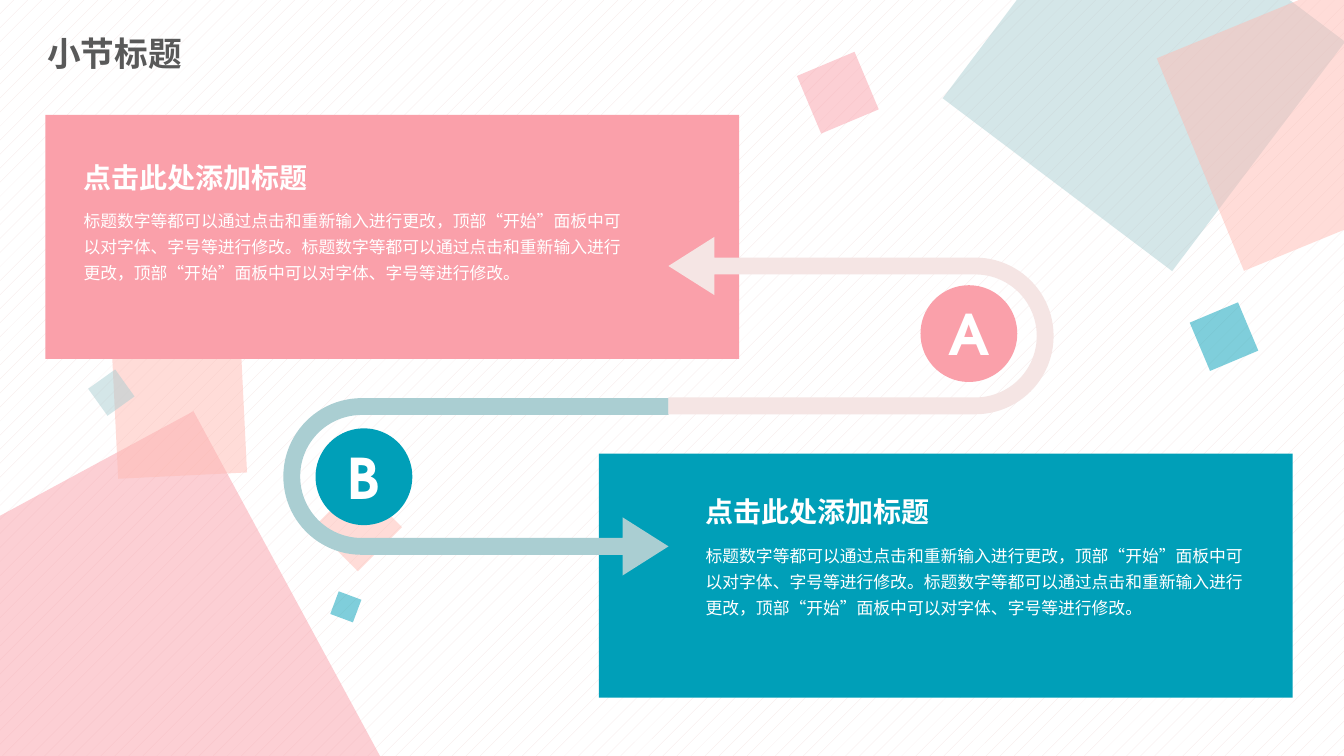
from lxml import etree
from pptx import Presentation
from pptx.dml.color import RGBColor
from pptx.enum.dml import MSO_PATTERN
from pptx.enum.shapes import MSO_SHAPE
from pptx.enum.text import MSO_ANCHOR, MSO_AUTO_SIZE, PP_ALIGN
from pptx.oxml.ns import qn
from pptx.util import Inches, Pt

COLORS = {
    "pink": "FAA0AA",
    "peach": "FFBBB3",
    "blush": "F5E5E4",
    "mist": "AACED2",
    "teal": "009FB8",
    "gray": "595959",
    "white": "FFFFFF",
}
CJK_FONT = "Noto Sans CJK SC"
LATIN_FONT = "TeX Gyre Adventor"

# left, top, side, rotation, colour
SQUARES = [
    (-0.93, 4.8, 4.06, 331.6, "pink"),
    (1.14, 3.44, 1.28, 357.2, "peach"),
    (3.24, 4.92, 0.62, 315, "peach"),
    (0.94, 3.73, 0.33, 324.4, "mist"),
    (9.92, -0.73, 2.85, 37, "mist"),
    (11.82, 0.06, 2.28, 337.7, "peach"),
    (8, 0.61, 0.62, 337.2, "pink"),
    (11.88, 3.08, 0.52, 337.2, "teal"),
    (3.31, 5.9, 0.24, 290.5, "teal"),
]
HEADING = "点击此处添加标题"
SENTENCE = "标题数字等都可以通过点击和重新输入进行更改，顶部“开始”面板中可以对字体、字号等进行修改。"


def rgb(name):
    return RGBColor.from_string(COLORS[name])


def write(frame, text, size, color="white", font=LATIN_FONT, bold=False,
          align=PP_ALIGN.LEFT, anchor=MSO_ANCHOR.TOP, line_spacing=None,
          space_before=0):
    frame.word_wrap = True
    frame.vertical_anchor = anchor
    paragraph = frame.paragraphs[0]
    paragraph.alignment = align
    paragraph.line_spacing = line_spacing
    paragraph.space_before = Pt(space_before)
    run = paragraph.add_run()
    run.text = text
    run.font.size = Pt(size)
    run.font.bold = bold
    run.font.name = font
    run.font.color.rgb = rgb(color)
    east_asian = etree.SubElement(run.font._element, qn("a:ea"))
    east_asian.set("typeface", CJK_FONT)


class SlideBuilder:
    def __init__(self, presentation):
        self.slide = presentation.slides.add_slide(presentation.slide_layouts[5])

    def background(self):
        fill = self.slide.background.fill
        fill.patterned()
        fill.pattern = MSO_PATTERN.PERCENT_5
        fill.fore_color.rgb = rgb("blush")
        fill.back_color.rgb = rgb("white")

    def title(self, text, left, top, width, height):
        title = self.slide.shapes.title
        title.left, title.top = Inches(left), Inches(top)
        title.width, title.height = Inches(width), Inches(height)
        title.text_frame.auto_size = MSO_AUTO_SIZE.NONE
        write(title.text_frame, text, 24, color="gray", font=CJK_FONT, bold=True,
              anchor=MSO_ANCHOR.MIDDLE, line_spacing=0.9, space_before=10)

    def shape(self, kind, left, top, width, height, color, rotation=0):
        shape = self.slide.shapes.add_shape(
            kind, Inches(left), Inches(top), Inches(width), Inches(height))
        shape.rotation = rotation
        shape.shadow.inherit = False
        shape.fill.solid()
        shape.fill.fore_color.rgb = rgb(color)
        shape.line.fill.background()
        return shape

    def translucent_square(self, left, top, side, rotation, color):
        square = self.shape(MSO_SHAPE.RECTANGLE, left, top, side, side, color, rotation)
        hue = square._element.spPr.find(qn("a:solidFill"))[0]
        etree.SubElement(hue, qn("a:alpha")).set("val", "50000")

    def uturn_arrow(self, left, top, color, rotation):
        arrow = self.shape(MSO_SHAPE.U_TURN_ARROW, left, top, 1.76, 3.82, color, rotation)
        arrow._element.spPr.find(qn("a:xfrm")).set("flipH", "1")
        for index, value in enumerate((0.095, 0.164, 0.259, 0.441, 1)):
            arrow.adjustments[index] = value

    def panel(self, left, top, color):
        self.shape(MSO_SHAPE.RECTANGLE, left, top, 6.88, 2.42, color)

    def badge(self, letter, left, top, color):
        badge = self.shape(MSO_SHAPE.OVAL, left, top, 0.96, 0.96, color)
        write(badge.text_frame, letter, 40, bold=True, align=PP_ALIGN.CENTER,
              anchor=MSO_ANCHOR.MIDDLE)

    def text(self, text, left, top, width, height, size, **style):
        box = self.slide.shapes.add_textbox(
            Inches(left), Inches(top), Inches(width), Inches(height))
        write(box.text_frame, text, size, line_spacing=1.3, **style)
        box.text_frame.auto_size = MSO_AUTO_SIZE.SHAPE_TO_FIT_TEXT

    def message(self, left, top):
        """Add a heading with its body text below."""
        self.text(SENTENCE * 2, left, top + 0.54, 5.61, 0.89, 12, font=CJK_FONT)
        self.text(HEADING, left, top, 3.15, 0.54, 20, bold=True)


def main():
    presentation = Presentation()
    presentation.slide_width = Inches(13.33)
    presentation.slide_height = Inches(7.5)
    builder = SlideBuilder(presentation)
    builder.background()
    builder.title("小节标题", 0.37, 0.26, 6.13, 0.58)
    for square in SQUARES:
        builder.translucent_square(*square)
    builder.panel(5.94, 4.5, "teal")
    builder.uturn_arrow(3.84, 2.92, "mist", rotation=270)
    builder.panel(0.45, 1.14, "pink")
    builder.uturn_arrow(7.66, 1.32, "blush", rotation=90)
    builder.badge("A", 9.13, 2.83, "pink")
    builder.badge("B", 3.13, 4.25, "teal")
    builder.message(0.73, 1.44)
    builder.message(6.9, 4.76)
    presentation.save("out.pptx")


if __name__ == "__main__":
    main()
